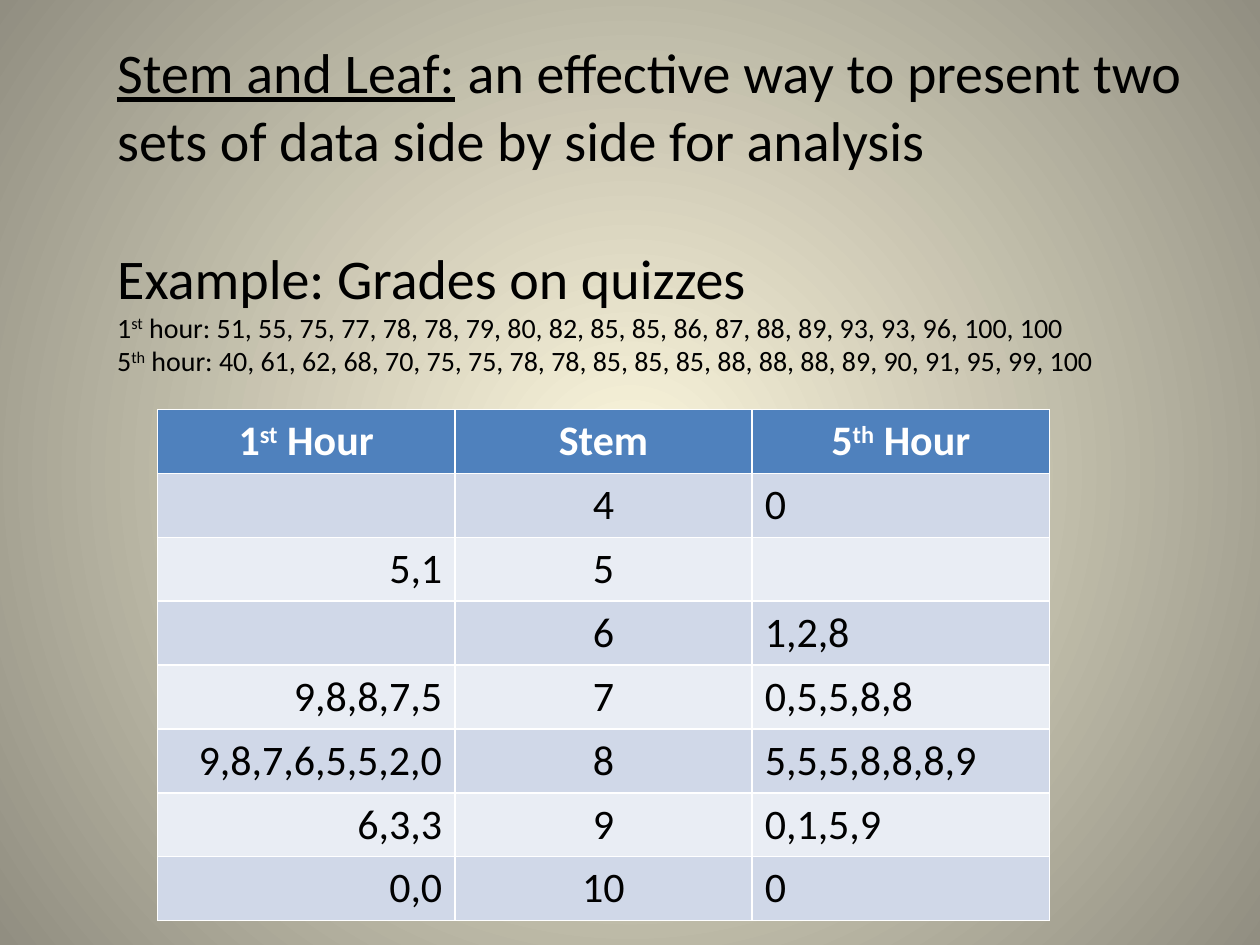
from pptx import Presentation
from pptx.dml.color import RGBColor as RGB
from pptx.enum.text import MSO_ANCHOR as Anchor, MSO_AUTO_SIZE as Fit, PP_ALIGN as Align
from pptx.oxml import parse_xml
from pptx.oxml.ns import nsdecls, qn
from pptx.util import Inches, Pt

COLORS = {
    "glow": "FCF7DD", "edge": "918E81", "ink": "000000", "white": "FFFFFF",
    "head": "4F81BD", "dark": "D0D8E8", "light": "E9EDF4",
}
FONT = "Calibri"

ROWS = [
    ("1^st^ Hour", "Stem", "5^th^ Hour"),
    ("", "4", "0"),
    ("5,1", "5", ""),
    ("", "6", "1,2,8"),
    ("9,8,8,7,5", "7", "0,5,5,8,8"),
    ("9,8,7,6,5,5,2,0", "8", "5,5,5,8,8,8,9"),
    ("6,3,3", "9", "0,1,5,9"),
    ("0,0", "10", "0"),
]
LINES = [
    ("Example: Grades on quizzes", 32),
    ("1^st^ hour: 51, 55, 75, 77, 78, 78, 79, 80, 82, 85, 85, 86, 87, 88, 89, "
     "93, 93, 96, 100, 100", 16),
    ("5^th^ hour: 40, 61, 62, 68, 70, 75, 75, 78, 78, 85, 85, 85, 88, 88, 88, "
     "89, 90, 91, 95, 99, 100", 16),
]


def color(name):
    return RGB.from_string(COLORS[name])


class Deck:
    def __init__(self):
        self.prs = Presentation()
        self.prs.slide_width, self.prs.slide_height = Inches(10), Inches(7.5)
        self.slide = self.prs.slides.add_slide(self.prs.slide_layouts[1])

    def glow(self):
        """Fill the background with a gradient from the centre outwards."""
        fill = self.slide.background.fill
        fill.gradient()
        for stop, name in zip(fill.gradient_stops, ("glow", "edge")):
            stop.color.rgb = color(name)
        grad = self.slide._element.find(".//" + qn("a:gradFill"))
        grad.replace(grad.find(qn("a:lin")), parse_xml(
            f'<a:path {nsdecls("a")} path="circle"><a:fillToRect '
            'l="50000" t="50000" r="50000" b="50000"/></a:path>'))

    def put(self, para, text, size, ink="ink", bold=False, align=Align.LEFT):
        """Fill a paragraph with text in which ^marks^ enclose a superscript."""
        font = para.font
        font.name, font.size, font.bold = FONT, Pt(size), bold
        font.color.rgb = color(ink)
        para.alignment = align
        para.space_before = Pt(0)
        for i, part in enumerate(text.split("^")):
            run = para.add_run()
            run.text = part
            if i % 2:
                run.font._element.set("baseline", "30000")

    def frame(self, index, left, top, width, height):
        """Place a template placeholder and return its text frame."""
        box = self.slide.placeholders[index]
        box.left, box.top = Inches(left), Inches(top)
        box.width, box.height = Inches(width), Inches(height)
        frame = box.text_frame
        frame.word_wrap, frame.auto_size = True, Fit.NONE
        frame.vertical_anchor = Anchor.TOP
        return frame

    def title(self, lead, rest, *place):
        para = self.frame(0, *place).paragraphs[0]
        self.put(para, lead, 32)
        para.runs[0].font.underline = True
        para.add_run().text = rest

    def body(self, lines, *place):
        frame = self.frame(1, *place)
        for i, (text, size) in enumerate(lines):
            para = frame.add_paragraph() if i else frame.paragraphs[0]
            self.put(para, text, size)
            props = para._p.get_or_add_pPr()
            props.set("marL", "0")
            props.set("indent", "0")
            bullet = parse_xml(f'<a:buNone {nsdecls("a")}/>')
            props.find(qn("a:defRPr")).addprevious(bullet)

    def table(self, rows, left, top, width, height):
        grid = self.slide.shapes.add_table(
            len(rows), len(rows[0]), Inches(left), Inches(top),
            Inches(width), Inches(height)).table
        sides = (Align.RIGHT, Align.CENTER, Align.LEFT)
        for r, row in enumerate(rows):
            head = r == 0
            shade = "head" if head else "dark" if r % 2 else "light"
            for c, text in enumerate(row):
                cell = grid.cell(r, c)
                cell.fill.solid()
                cell.fill.fore_color.rgb = color(shade)
                if text:
                    self.put(cell.text_frame.paragraphs[0], text, 24,
                             "white" if head else "ink", head,
                             Align.CENTER if head else sides[c])


def main():
    deck = Deck()
    deck.glow()
    deck.title("Stem and Leaf:", " an effective way to present two sets of data "
               "side by side for analysis", 0.83, 0.25, 8.75, 1.2)
    deck.body(LINES, 0.83, 1.88, 8.75, 1.2)
    deck.table(ROWS, 1.25, 3.25, 7.08, 4)
    deck.prs.save("out.pptx")


if __name__ == "__main__":
    main()
